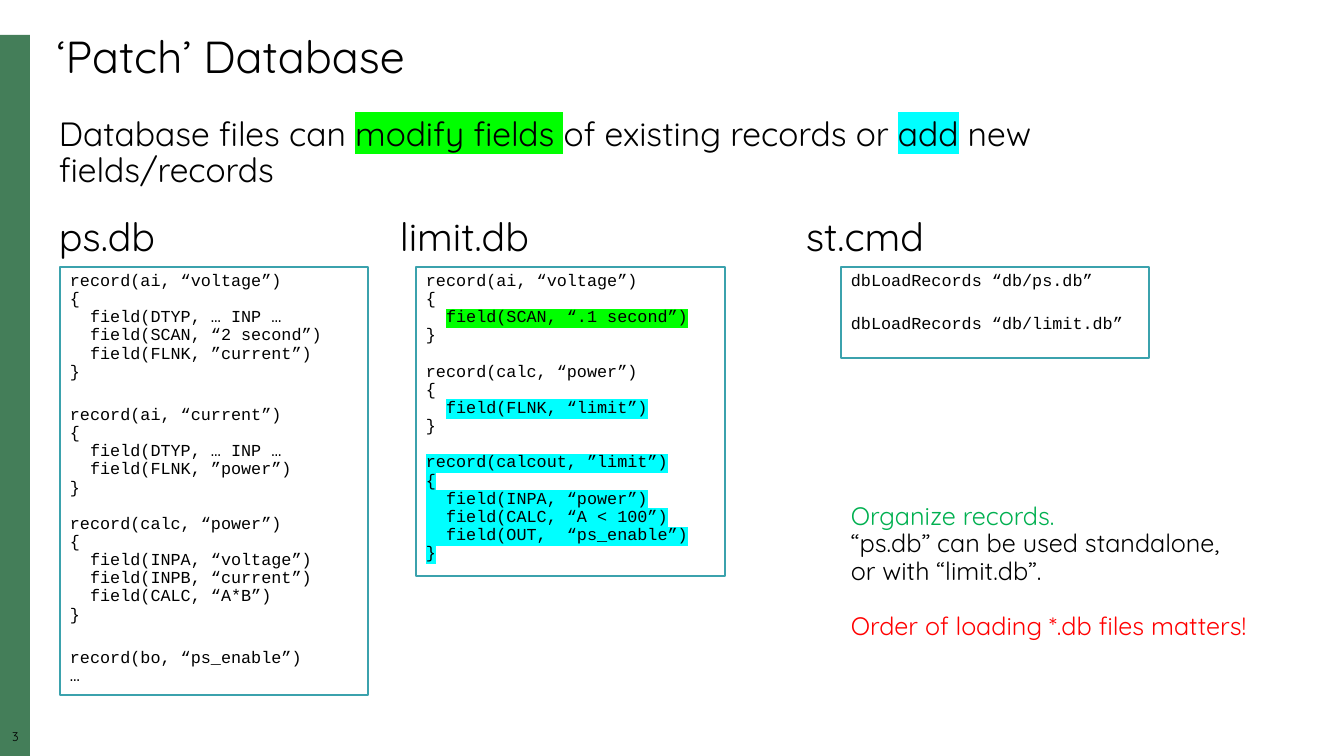
from copy import deepcopy
from dataclasses import dataclass

from lxml import etree
from pptx import Presentation
from pptx import util as u
from pptx.dml.color import RGBColor
from pptx.enum import shapes, text
from pptx.oxml import ns

SCALE = 12192000 / 1344
HUES = {
    "black": "000000",
    "white": "FFFFFF",
    "bar": "447E59",
    "edge": "3BA2AD",
    "lime": "00FF00",
    "cyan": "00FFFF",
    "green": "00B050",
    "red": "FF0000",
}
SANS = "Quicksand"
MONO = "Courier New"


@dataclass
class Span:
    words: str
    mark: str = ""
    ink: str = "black"


@dataclass
class Para:
    spans: list[Span]
    gap: float = 0


@dataclass
class Label:
    left: int
    top: int
    width: int
    height: int
    paras: list[Para]
    size: int


@dataclass
class Panel:
    left: int
    width: int
    height: int
    paras: list[Para]


def px(count: int) -> u.Emu:
    return u.Emu(round(count * SCALE))


def hue(name: str) -> RGBColor:
    return RGBColor.from_string(HUES[name])


def plain(words: str, gap: float = 0, ink: str = "black") -> Para:
    return Para([Span(words, ink=ink)], gap)


def add_run(para, words: str, span: Span, size: int, face: str):
    run = para.add_run()
    run.text = words
    run.font.size = u.Pt(size)
    run.font.color.rgb = hue(span.ink)
    if span.mark:
        mark = etree.SubElement(run._r.rPr, ns.qn("a:highlight"))
        etree.SubElement(mark, ns.qn("a:srgbClr"), val=HUES[span.mark])
    run.font.name = face
    return run


def write(frame, paras: list[Para], size: int = 18, face: str = SANS,
          align=text.PP_ALIGN.LEFT, wrap: bool = True) -> None:
    frame.word_wrap = wrap
    frame.vertical_anchor = text.MSO_ANCHOR.TOP
    for i, item in enumerate(paras):
        para = frame.add_paragraph() if i else frame.paragraphs[0]
        para.alignment = align
        para.line_spacing = 0.9
        para.space_before = u.Pt(item.gap)
        for span in item.spans:
            style = None
            for words in span.words.split("\n"):
                if style is not None:
                    para.add_line_break()
                    para._p[-1].append(deepcopy(style))
                run = add_run(para, words, span, size, face)
                style = run._r.rPr


def add_rect(slide, left: int, top: int, width: int, height: int,
             fill: str, edge: str = ""):
    rect = slide.shapes.add_shape(shapes.MSO_SHAPE.RECTANGLE,
                                  px(left), px(top), px(width), px(height))
    rect.shadow.inherit = False
    rect.fill.solid()
    rect.fill.fore_color.rgb = hue(fill)
    if edge:
        rect.line.color.rgb = hue(edge)
        rect.line.width = u.Pt(0.85)
    else:
        rect.line.fill.background()
    return rect


def add_text(slide, left: int, top: int, width: int, height: int,
             paras: list[Para], **style):
    box = slide.shapes.add_textbox(px(left), px(top), px(width), px(height))
    write(box.text_frame, paras, **style)
    return box


LEAD = [Para([
    Span("Database files can "),
    Span("modify fields ", "lime"),
    Span("of existing records or "),
    Span("add", "cyan"),
    Span(" new fields/records"),
])]

SUPPLY = [
    plain("""record(ai, “voltage”)
{
  field(DTYP, … INP …
  field(SCAN, “2 second”)
  field(FLNK, ”current”)
}"""),
    plain("""record(ai, “current”)
{
  field(DTYP, … INP …
  field(FLNK, ”power”)
}""", 18),
    plain("""record(calc, “power”)
{
  field(INPA, “voltage”)
  field(INPB, “current”)
  field(CALC, “A*B”)
}""", 13),
    plain("""record(bo, “ps_enable”)
…""", 18),
]

LIMIT = [
    Para([Span("record(ai, “voltage”)\n{\n  "),
          Span("field(SCAN, “.1 second”)", "lime"),
          Span("\n}")]),
    Para([Span("record(calc, “power”)\n{\n  "),
          Span("field(FLNK, “limit”)", "cyan"),
          Span("\n}")], 13),
    Para([Span("""record(calcout, ”limit”)
{
  field(INPA, “power”)
  field(CALC, “A < 100”)
  field(OUT,  “ps_enable”)
}""", "cyan")], 13),
]

START = [
    plain("dbLoadRecords “db/ps.db”"),
    plain("dbLoadRecords “db/limit.db”", 18),
]

NOTES = [
    plain("Organize records.", ink="green"),
    plain("“ps.db” can be used standalone,\nor with “limit.db”."),
    plain("Order of loading *.db files matters!", 20, "red"),
]

LABELS = [
    Label(47, 30, 1260, 59, [plain("‘Patch’ Database")], 32),
    Label(49, 112, 1067, 91, LEAD, 24),
    Label(49, 213, 300, 54, [plain("ps.db")], 28),
    Label(390, 213, 300, 54, [plain("limit.db")], 28),
    Label(796, 213, 300, 54, [plain("st.cmd")], 28),
]

PANELS = [
    Panel(60, 308, 428, SUPPLY),
    Panel(416, 309, 309, LIMIT),
    Panel(841, 308, 91, START),
]


def main() -> None:
    deck = Presentation()
    deck.slide_width, deck.slide_height = px(1344), px(756)
    slide = deck.slides.add_slide(deck.slide_layouts[6])
    add_rect(slide, 0, 35, 30, 721, "bar")
    folio = add_text(slide, 0, 731, 31, 17, [plain("3")], size=9,
                     align=text.PP_ALIGN.CENTER).text_frame
    folio.margin_left = folio.margin_right = 0
    folio.margin_top = folio.margin_bottom = 0
    for item in LABELS:
        add_text(slide, item.left, item.top, item.width, item.height,
                 item.paras, size=item.size)
    for item in PANELS:
        rect = add_rect(slide, item.left, 267, item.width, item.height,
                        "white", "edge")
        write(rect.text_frame, item.paras, size=12, face=MONO)
    add_text(slide, 841, 499, 444, 147, NOTES, wrap=False)
    deck.save("out.pptx")


if __name__ == "__main__":
    main()
